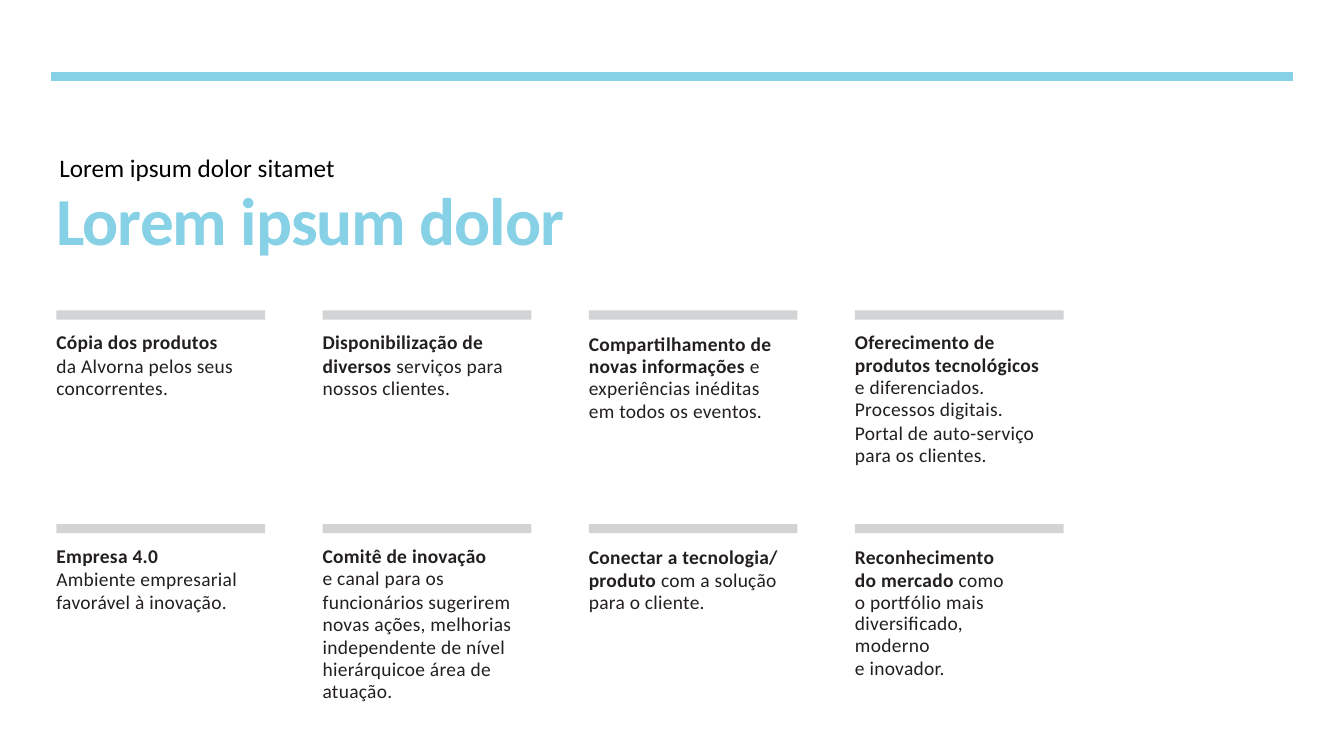
"""Build a slide with a title and a four-by-two grid of short statements."""
from dataclasses import dataclass

from lxml.etree import SubElement
from pptx import Presentation
from pptx.dml.color import RGBColor
from pptx.enum.shapes import MSO_CONNECTOR as Connector, MSO_SHAPE as Preset
from pptx.enum.text import MSO_ANCHOR as Anchor, MSO_AUTO_SIZE as AutoSize
from pptx.oxml.ns import qn
from pptx.util import Inches, Pt

SKY, SILVER, INK, BLACK = "87D1E6", "D1D3D4", "231F20", "000000"
FONT = "Calibri"
GRID_LEFT, GRID_TOP = 0.56, 3.08
COLUMN, ROW = 2.64, 2.12
COLUMNS = 4
BAR_WIDTH, BAR_HEIGHT = 2.07, 0.09
TEXT_DROP = 0.18


@dataclass(frozen=True)
class Line:
    """A paragraph: bold lead, plain rest, line pitch and space before in points."""
    lead: str = ""
    rest: str = ""
    pitch: float | None = 16
    before: float = 0


@dataclass(frozen=True)
class Style:
    """Type size, colour and letter spacing in points."""
    size: float
    color: str
    spacing: float = 0


@dataclass(frozen=True)
class Card:
    """One cell of the grid."""
    width: float
    height: float
    lines: tuple[Line, ...]
    inset: float = 0.02


CARD_STYLE = Style(13.9, INK, 0.2)

CARDS = (
    Card(1.94, 0.7, (
        Line("Cópia dos produtos", pitch=16.4),
        Line(rest="da Alvorna pelos seus\nconcorrentes.", before=0.8))),
    Card(1.97, 0.7, (
        Line("Disponibilização de", pitch=16.4),
        Line("diversos ", "serviços para\nnossos clientes.", before=0.8))),
    Card(1.99, 0.92, (
        Line("Compartilhamento de\nnovas informações ",
             "e\nexperiências inéditas\nem todos os eventos."),), 0.04),
    Card(2.03, 1.37, (
        Line("Oferecimento de", pitch=16.4),
        Line("produtos tecnológicos"),
        Line(rest="e diferenciados."),
        Line(rest="Processos digitais."),
        Line(rest="Portal de auto-serviço\npara os clientes.", before=0.8))),
    Card(1.94, 0.7, (
        Line("Empresa 4.0", pitch=16.4),
        Line(rest="Ambiente empresarial\nfavorável à inovação.", before=0.8))),
    Card(2.04, 1.59, (
        Line("Comitê de inovação", pitch=16.4),
        Line(rest="e canal para os"),
        Line(rest="funcionários sugerirem\nnovas ações, melhorias\n"
                  "independente de nível\nhierárquicoe área de", before=0.8),
        Line(rest="atuação.", pitch=15.6))),
    Card(2.07, 0.7, (
        Line("Conectar a tecnologia/\nproduto ",
             "com a solução\npara o cliente."),), 0.04),
    Card(2.02, 1.13, (
        Line("Reconhecimento\ndo mercado ", "como\no portfólio mais"),
        Line(rest="diversificado,\nmoderno", pitch=15.2),
        Line(rest="e inovador.", pitch=16.4)), 0.04),
)


def rgb(color: str) -> RGBColor:
    """Turn a hex string into a colour."""
    return RGBColor.from_string(color)


def add_runs(paragraph, text: str, bold: bool, style: Style) -> None:
    """Add text run by run, with a line break at each newline."""
    for index, piece in enumerate(text.split("\n")):
        if index:
            paragraph.add_line_break()
        if not piece:
            continue
        run = paragraph.add_run()
        run.text = piece
        run.font.name = FONT
        run.font.size = Pt(style.size)
        run.font.bold = bold
        run.font.color.rgb = rgb(style.color)
        run._r.get_or_add_rPr().set("spc", str(round(style.spacing * 100)))


def add_text(slide, box: tuple[float, ...], insets: tuple[float, ...],
             lines: tuple[Line, ...], style: Style, anchor=Anchor.TOP) -> None:
    """Add a wrapping text box; insets are left, top, right and bottom."""
    frame = slide.shapes.add_textbox(*map(Inches, box)).text_frame
    frame.word_wrap = True
    frame.auto_size = AutoSize.SHAPE_TO_FIT_TEXT
    frame.vertical_anchor = anchor
    (frame.margin_left, frame.margin_top,
     frame.margin_right, frame.margin_bottom) = map(Inches, insets)
    for index, line in enumerate(lines):
        paragraph = frame.add_paragraph() if index else frame.paragraphs[0]
        if line.pitch:
            paragraph.line_spacing = Pt(line.pitch)
        if line.before:
            paragraph.space_before = Pt(line.before)
        add_runs(paragraph, line.lead, True, style)
        add_runs(paragraph, line.rest, False, style)


def add_rule(slide) -> None:
    """Draw the wide rule above the title."""
    rule = slide.shapes.add_connector(
        Connector.STRAIGHT, *map(Inches, (12.82, 0.76, 0.51, 0.76)))
    rule.line.color.rgb = rgb(SKY)
    rule.line.width = Pt(6)
    SubElement(rule._element.spPr, qn("a:effectLst"))


def add_card(slide, index: int, card: Card) -> None:
    """Draw a card's bar and its text in its grid cell."""
    row, column = divmod(index, COLUMNS)
    left, top = GRID_LEFT + column * COLUMN, GRID_TOP + row * ROW
    bar = slide.shapes.add_shape(
        Preset.RECTANGLE, *map(Inches, (left, top, BAR_WIDTH, BAR_HEIGHT)))
    bar.shadow.inherit = False
    bar.fill.solid()
    bar.fill.fore_color.rgb = rgb(SILVER)
    bar.line.fill.background()
    add_text(slide, (left, top + TEXT_DROP, card.width, card.height),
             (0, card.inset, 0, 0), card.lines, CARD_STYLE)


def main() -> None:
    """Build and save the slide."""
    deck = Presentation()
    deck.slide_width, deck.slide_height = Inches(13.33), Inches(7.5)
    slide = deck.slides.add_slide(deck.slide_layouts[6])
    add_rule(slide)
    for index, card in enumerate(CARDS):
        add_card(slide, index, card)
    add_text(slide, (0.55, 1.75, 6.11, 0.82), (0.01, 0.02, 0, 0),
             (Line("Lorem ipsum dolor", pitch=None),),
             Style(48, SKY, -0.7), Anchor.MIDDLE)
    add_text(slide, (0.49, 1.46, 3.64, 0.4), (0.1, 0.05, 0.1, 0.05),
             (Line(rest="Lorem ipsum dolor sitamet", pitch=None),),
             Style(18, BLACK))
    deck.save("out.pptx")


if __name__ == "__main__":
    main()
